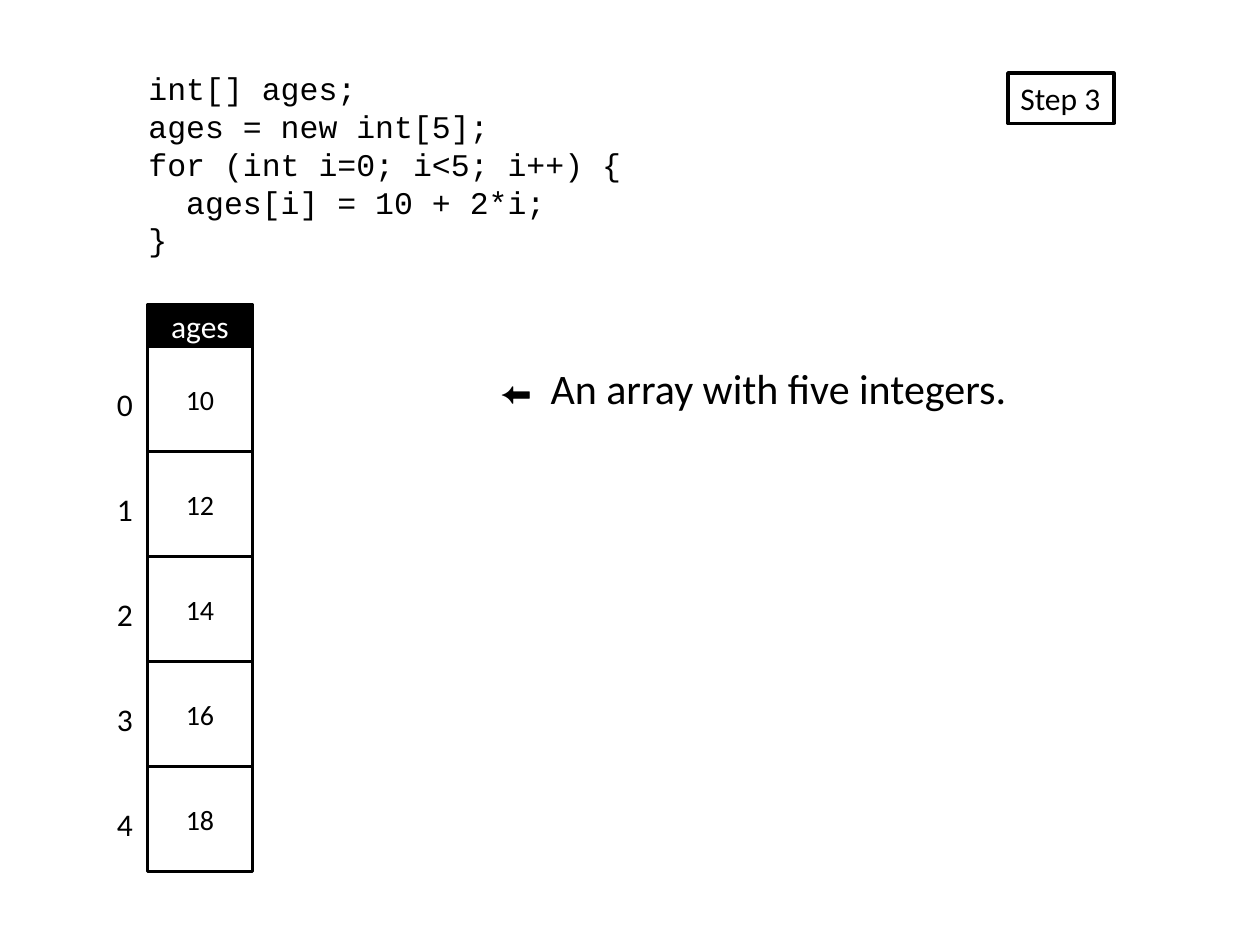
from dataclasses import dataclass

from pptx import Presentation
from pptx.dml.color import RGBColor
from pptx.enum.shapes import MSO_SHAPE as Shape
from pptx.enum.text import MSO_ANCHOR as Anchor, MSO_AUTO_SIZE as Fit, PP_ALIGN as Align
from pptx.util import Inches, Pt

BLACK = RGBColor(0, 0, 0)
WHITE = RGBColor(255, 255, 255)
SIDE = 5 / 6  # each array cell is a square
LEFT, TOP = 1.17, 2.75
HEAD = 0.33
AGES = [10, 12, 14, 16, 18]
CODE = """int[] ages;
ages = new int[5];
for (int i=0; i<5; i++) {
  ages[i] = 10 + 2*i;
}"""


@dataclass
class Area:
    x: float
    y: float
    w: float
    h: float

    def lengths(self) -> list:
        return [Inches(v) for v in (self.x, self.y, self.w, self.h)]


def write(shape, text: str, *, size=18, font="Calibri", color=BLACK,
          align=Align.LEFT, anchor=Anchor.TOP, wrap=False) -> None:
    """Fill the shape with one paragraph per line of text."""
    frame = shape.text_frame
    frame.text = text
    frame.word_wrap = wrap
    frame.auto_size = Fit.NONE if wrap else Fit.SHAPE_TO_FIT_TEXT
    frame.vertical_anchor = anchor
    for para in frame.paragraphs:
        para.alignment = align
        for run in para.runs:
            run.font.size = Pt(size)
            run.font.name = font
            run.font.color.rgb = color


def add_box(slide, area: Area, text: str, *, fill=WHITE, **style):
    box = slide.shapes.add_shape(Shape.RECTANGLE, *area.lengths())
    box.shadow.inherit = False
    box.fill.solid()
    box.fill.fore_color.rgb = fill
    box.line.color.rgb = BLACK
    box.line.width = Pt(2)
    write(box, text, **style)
    return box


def add_label(slide, area: Area, text: str, **style):
    label = slide.shapes.add_textbox(*area.lengths())
    write(label, text, **style)
    return label


def add_array(slide, name: str, values: list[int]) -> None:
    """Draw a named column of cells with an index beside each."""
    mid = dict(align=Align.CENTER, anchor=Anchor.MIDDLE, wrap=True)
    add_box(slide, Area(LEFT, TOP - HEAD, SIDE, HEAD), name,
            fill=BLACK, color=WHITE, **mid)
    for i, value in enumerate(values):
        y = TOP + i * SIDE
        add_box(slide, Area(LEFT, y, SIDE, SIDE), str(value), size=16, **mid)
        add_label(slide, Area(LEFT - 0.34, y + 0.26, 0.33, 0.4), str(i))


def main() -> None:
    deck = Presentation()
    deck.slide_width, deck.slide_height = Inches(10), Inches(7.5)
    slide = deck.slides.add_slide(deck.slide_layouts[6])

    add_label(slide, Area(1.08, 0.5, 3.97, 1.92), CODE, font="Courier New")
    add_array(slide, "ages", AGES)
    add_box(slide, Area(8, 0.58, 0.84, 0.4), "Step 3")

    note = add_label(slide, Area(3.87, 2.83, 4.28, 0.5), "⬅")
    run = note.text_frame.paragraphs[0].add_run()
    run.text = "  An array with five integers."
    run.font.size = Pt(24)
    run.font.name = "Calibri"
    run.font.color.rgb = BLACK

    deck.save("out.pptx")


if __name__ == "__main__":
    main()
